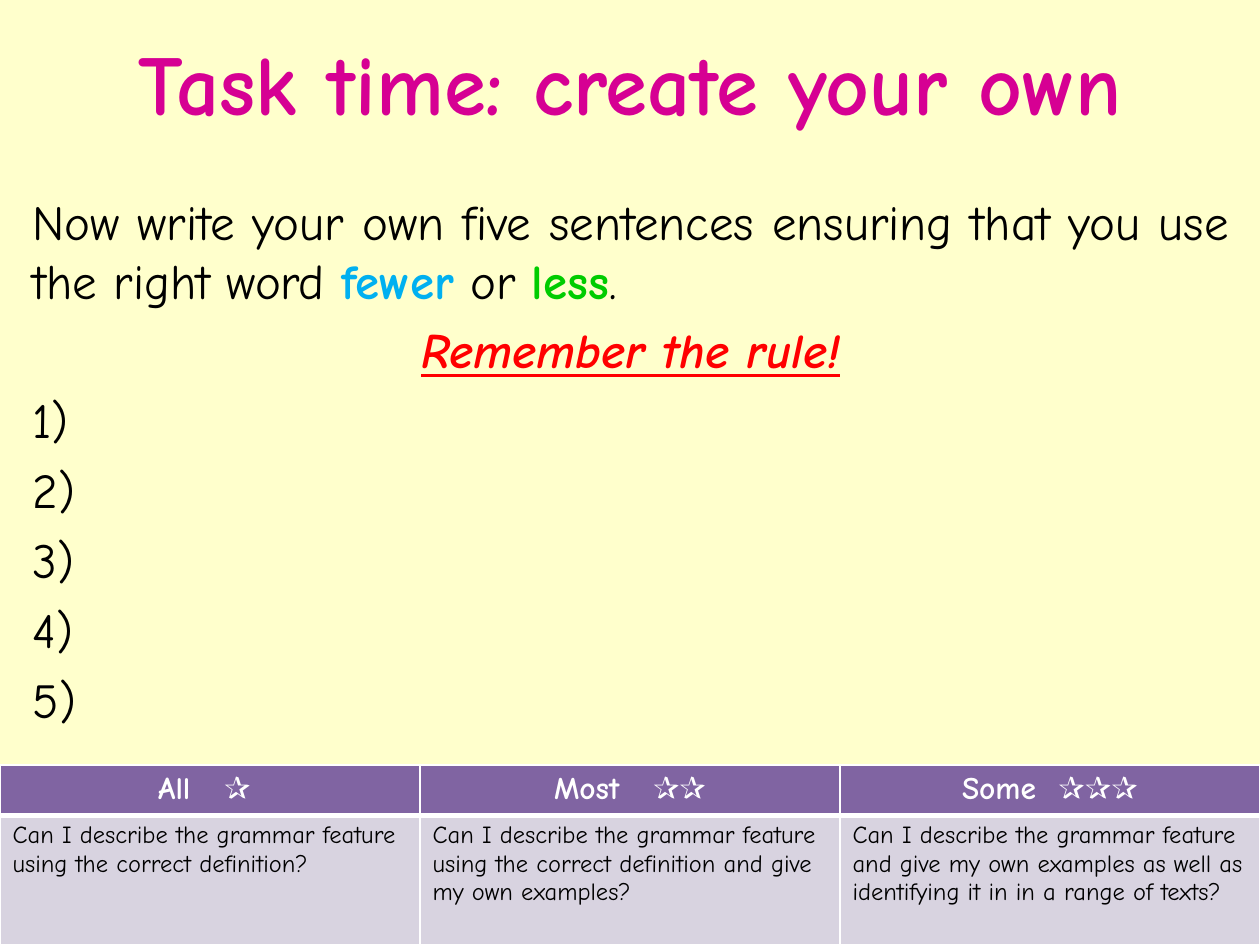
from dataclasses import dataclass

from lxml import etree
from pptx import Presentation
from pptx.dml.color import RGBColor
from pptx.enum.text import MSO_ANCHOR, PP_ALIGN
from pptx.oxml.ns import qn
from pptx.util import Pt

CENTER, JUSTIFY, LEFT = PP_ALIGN.CENTER, PP_ALIGN.JUSTIFY, PP_ALIGN.LEFT
TOP, MIDDLE = MSO_ANCHOR.TOP, MSO_ANCHOR.MIDDLE

FONT = "Comic Neue"
COLOURS = {
    "background": "FFFFCC",
    "title": "D60093",
    "text": "000000",
    "fewer": "00B0F0",
    "less": "00CC00",
    "rule": "FF0000",
    "white": "FFFFFF",
    "header": "8064A2",
    "criterion": "D8D3E0",
}
SLIDE_WIDTH, SLIDE_HEIGHT = 720, 540
TABLE_TOP = 437.2
HEADER_HEIGHT, CRITERION_HEIGHT = 27.4, 74
BODY_SIZE, BODY_GAP = 28, 6.3
SENTENCE_COUNT = 5


@dataclass
class TextRun:
    text: str
    size: float = BODY_SIZE
    colour: str = "text"
    bold: bool = False
    italic: bool = False
    underline: bool = False


@dataclass
class TextLine:
    runs: list[TextRun]
    alignment: PP_ALIGN = JUSTIFY
    space_before: float = 0


@dataclass
class Level:
    heading: str
    criterion: str


LEVELS = [
    Level("All   ✰ ", "Can I describe the grammar feature using the correct definition?"),
    Level("Most   ✰✰", "Can I describe the grammar feature using the correct definition "
          "and give my own examples?"),
    Level("Some  ✰✰✰", "Can I describe the grammar feature and give my own examples "
          "as well as identifying it in in a range of texts?"),
]

TASK = [
    [TextRun("Now write your own five sentences ensuring that you use the right word "),
     TextRun("fewer", colour="fewer", bold=True),
     TextRun(" or "),
     TextRun("less", colour="less", bold=True),
     TextRun(". ")],
    *([TextRun(f"{number})")] for number in range(1, SENTENCE_COUNT + 1)),
]
RULE = [TextRun("Remember the rule!", colour="rule", bold=True, italic=True, underline=True)]


def colour(name: str) -> RGBColor:
    return RGBColor.from_string(COLOURS[name])


def write_lines(text_frame, lines: list[TextLine]) -> None:
    for index, line in enumerate(lines):
        paragraph = text_frame.add_paragraph() if index else text_frame.paragraphs[0]
        paragraph.alignment = line.alignment
        paragraph.space_before = Pt(line.space_before)
        for text_run in line.runs:
            run = paragraph.add_run()
            run.text = text_run.text
            font = run.font
            font.name = FONT
            font.size = Pt(text_run.size)
            font.color.rgb = colour(text_run.colour)
            font.bold = text_run.bold
            font.italic = text_run.italic
            font.underline = text_run.underline


def add_text(slide, left: float, top: float, width: float, height: float,
             lines: list[TextLine], anchor: MSO_ANCHOR = TOP) -> None:
    text_box = slide.shapes.add_textbox(Pt(left), Pt(top), Pt(width), Pt(height))
    text_frame = text_box.text_frame
    text_frame.word_wrap = True
    text_frame.vertical_anchor = anchor
    write_lines(text_frame, lines)


def set_borders(cell, widths: dict[str, float]) -> None:
    """Draw white borders; they must precede the fill in the cell properties."""
    properties = cell._tc.get_or_add_tcPr()
    for position, (side, width) in enumerate(widths.items()):
        line = etree.Element(qn(f"a:ln{side}"), w=str(Pt(width)))
        fill = etree.SubElement(line, qn("a:solidFill"))
        etree.SubElement(fill, qn("a:srgbClr"), val=COLOURS["white"])
        properties.insert(position, line)


def fill_cell(cell, line: TextLine, fill: str, top: float, bottom: float) -> None:
    cell.fill.solid()
    cell.fill.fore_color.rgb = colour(fill)
    set_borders(cell, {"L": 1, "R": 1, "T": top, "B": bottom})
    write_lines(cell.text_frame, [line])


def add_levels_table(slide) -> None:
    frame = slide.shapes.add_table(2, len(LEVELS), Pt(0), Pt(TABLE_TOP), Pt(SLIDE_WIDTH),
                                   Pt(HEADER_HEIGHT + CRITERION_HEIGHT))
    table = frame.table
    table.rows[0].height = Pt(HEADER_HEIGHT)
    table.rows[1].height = Pt(CRITERION_HEIGHT)
    for index, level in enumerate(LEVELS):
        table.columns[index].width = Pt(SLIDE_WIDTH / len(LEVELS))
        heading = TextRun(level.heading, 18, "white", bold=True)
        fill_cell(table.cell(0, index), TextLine([heading], CENTER), "header", 1, 3)
        criterion = TextRun(level.criterion, 14)
        fill_cell(table.cell(1, index), TextLine([criterion], LEFT), "criterion", 3, 1)


def main() -> None:
    presentation = Presentation()
    presentation.slide_width, presentation.slide_height = Pt(SLIDE_WIDTH), Pt(SLIDE_HEIGHT)
    slide = presentation.slides.add_slide(presentation.slide_layouts[6])
    slide.background.fill.solid()
    slide.background.fill.fore_color.rgb = colour("background")

    title = TextRun("Task time: create your own", 48.6, "title", bold=True)
    add_text(slide, 0, 1.4, SLIDE_WIDTH, 90, [TextLine([title], CENTER)], MIDDLE)

    lines = [TextLine(runs, JUSTIFY, BODY_GAP) for runs in TASK]
    lines.insert(1, TextLine(RULE, CENTER, BODY_GAP))
    add_text(slide, 11.5, 105.8, 697.7, 362.2, lines)

    add_levels_table(slide)
    presentation.save("out.pptx")


if __name__ == "__main__":
    main()
